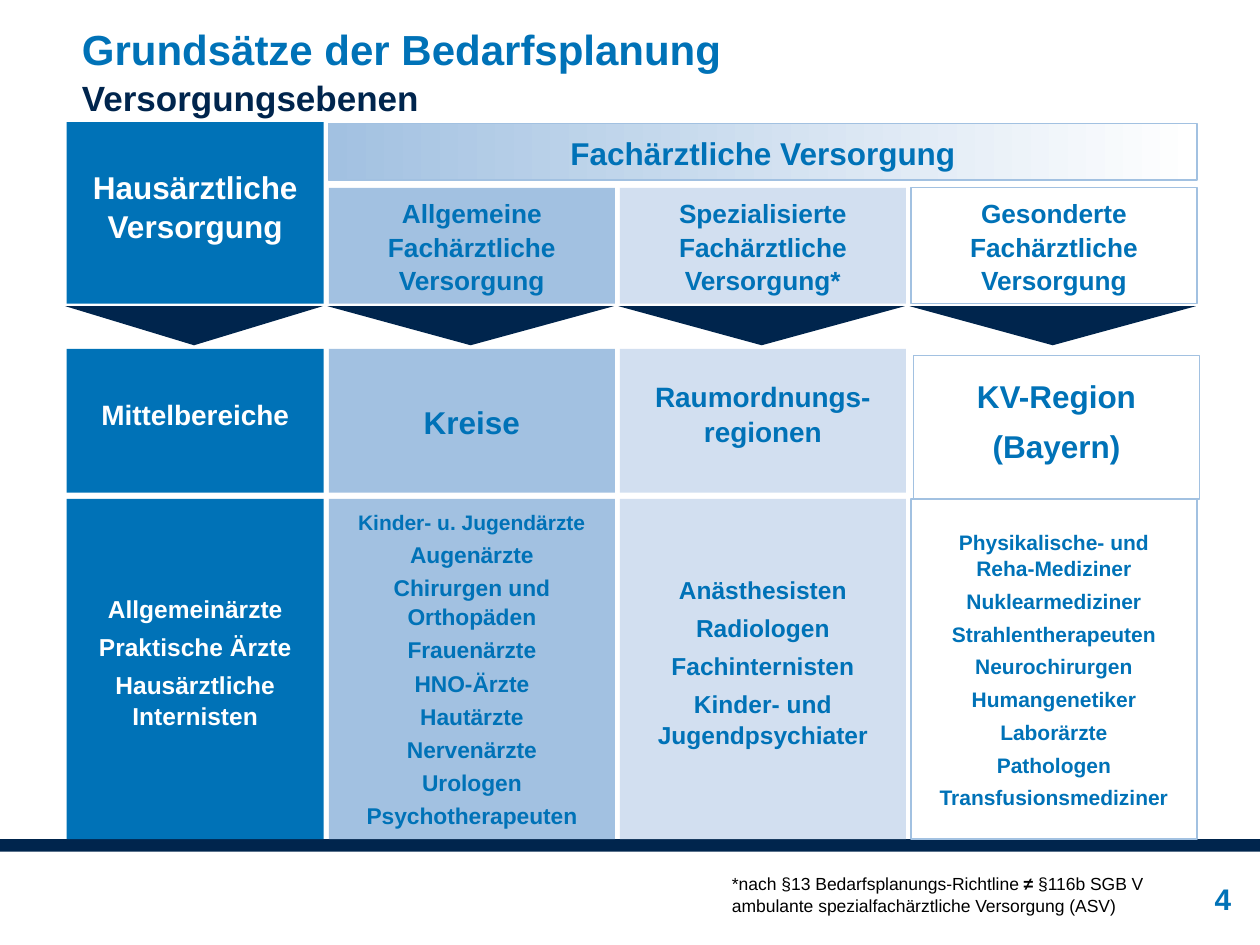
from dataclasses import dataclass

import pptx
import pptx.dml.color
import pptx.enum.shapes
import pptx.enum.text
import pptx.util

SHAPE = pptx.enum.shapes.MSO_SHAPE
ALIGN = pptx.enum.text.PP_ALIGN
ANCHOR = pptx.enum.text.MSO_ANCHOR
GRID_COLUMNS, GRID_ROWS = 100, 75
SLIDE_WIDTH, SLIDE_HEIGHT = pptx.util.Inches(10), pptx.util.Inches(7.5)


@dataclass(frozen=True)
class Theme:
    font: str = "Arial"
    blue: str = "0072B7"
    navy: str = "00254D"
    mid: str = "A2C1E1"
    pale: str = "D2DFF0"
    white: str = "FFFFFF"
    black: str = "000000"
    title: int = 24
    subtitle: int = 20
    number: int = 17
    heading: int = 18
    group: int = 15
    area: int = 16
    doctors: int = 14
    list_large: int = 13
    list_small: int = 12
    note: int = 10
    leading: float = 1.05


@dataclass(frozen=True)
class Box:
    x: float
    y: float
    w: float
    h: float

    def inner(self, x, y, w, h):
        return Box(self.x + x, self.y + y, w, h)

    def place(self):
        col, row = SLIDE_WIDTH / GRID_COLUMNS, SLIDE_HEIGHT / GRID_ROWS
        return [round(v) for v in (self.x * col, self.y * row, self.w * col, self.h * row)]


@dataclass(frozen=True)
class Level:
    group: str
    area: list
    area_size: int
    doctors: list
    sizes: list
    spacing: float
    fill: str
    ink: str
    outlined: bool = False
    top_inset: float = 0.2
    area_inset: float = 0.08
    nudge: tuple = (0, 0)


T = Theme()

LEVELS = [
    Level("Hausärztliche Versorgung", ["Mittelbereiche"], T.area,
          ["Allgemeinärzte", "Praktische Ärzte", "Hausärztliche Internisten"],
          [T.doctors] * 3, 0.3, T.blue, T.white, top_inset=0.08),
    Level("Allgemeine Fachärztliche Versorgung", ["Kreise"], T.heading,
          ["Kinder- u. Jugendärzte", "Augenärzte", "Chirurgen und Orthopäden",
           "Frauenärzte", "HNO-Ärzte", "Hautärzte", "Nervenärzte", "Urologen",
           "Psychotherapeuten"],
          [T.list_small] + [T.list_large] * 8, 0.2, T.mid, T.blue, area_inset=0.2),
    Level("Spezialisierte Fachärztliche Versorgung*", ["Raumordnungs-regionen"], T.area,
          ["Anästhesisten", "Radiologen", "Fachinternisten", "Kinder- und Jugendpsychiater"],
          [T.doctors] * 4, 0.3, T.pale, T.blue, top_inset=0.08),
    Level("Gesonderte Fachärztliche Versorgung", ["KV-Region", "(Bayern)"], T.heading,
          ["Physikalische- und Reha-Mediziner", "Nuklearmediziner", "Strahlentherapeuten",
           "Neurochirurgen", "Humangenetiker", "Laborärzte", "Pathologen",
           "Transfusionsmediziner"],
          [T.list_small] * 8, 0.3, T.white, T.blue, outlined=True, nudge=(0.2, 0.5)),
]


def rgb(value):
    return pptx.dml.color.RGBColor.from_string(value)


def style_run(r, size, color, bold=True):
    r.font.name, r.font.size, r.font.bold = T.font, pptx.util.Pt(size), bold
    r.font.color.rgb = rgb(color)


def write(tf, lines, sizes, colors, align, insets, spacing=0.0, anchor=ANCHOR.MIDDLE):
    tf.word_wrap = True
    tf.vertical_anchor = anchor
    tf.margin_left, tf.margin_top, tf.margin_right, tf.margin_bottom = map(
        pptx.util.Inches, insets)
    tf.text = "\n".join(lines)
    for i, (p, size, color) in enumerate(zip(tf.paragraphs, sizes, colors)):
        p.alignment, p.line_spacing = align, T.leading
        p.space_before = pptx.util.Pt(size * spacing if i else 0)
        for r in p.runs:
            style_run(r, size, color)


def add_block(s, box, fill, kind=SHAPE.RECTANGLE, outlined=False):
    sp = s.shapes.add_shape(kind, *box.place())
    sp.shadow.inherit = False
    sp.fill.solid()
    sp.fill.fore_color.rgb = rgb(fill)
    if outlined:
        sp.line.color.rgb = rgb(T.mid)
        sp.line.width = pptx.util.Pt(0.75)
    else:
        sp.line.fill.background()
    return sp


def add_cell(s, box, level, lines, sizes, top_inset=0.2, spacing=0.0):
    sp = add_block(s, box, level.fill, outlined=level.outlined)
    write(sp.text_frame, lines, sizes, [level.ink] * len(lines), ALIGN.CENTER,
          (0.2, top_inset, 0.2, 0.2), spacing)


def add_title(s, box):
    tf = s.shapes.add_textbox(*box.place()).text_frame
    write(tf, ["Grundsätze der Bedarfsplanung", "Versorgungsebenen"],
          [T.title, T.subtitle], [T.blue, T.navy], ALIGN.LEFT, (0, 0, 0, 0),
          anchor=ANCHOR.TOP)


def add_specialist_band(s, box):
    sp = add_block(s, box, T.mid, outlined=True)
    sp.fill.gradient()
    sp.fill.gradient_angle = 0
    for stop, color, position in zip(sp.fill.gradient_stops, (T.mid, T.white), (0, 1)):
        stop.color.rgb = rgb(color)
        stop.position = position
    write(sp.text_frame, ["Fachärztliche Versorgung"], [T.heading], [T.blue],
          ALIGN.CENTER, (0.2, 0.2, 0.2, 0.2))


def add_level(s, box, level, head_top, head_size):
    dx, dy = level.nudge
    add_cell(s, box.inner(0, head_top, box.w, 14.4 - head_top), level, [level.group],
             [head_size], level.top_inset if head_top == 0 else 0.2)
    arrow = add_block(s, box.inner(-0.1, 14.6, box.w, 3.1), T.navy, SHAPE.ISOSCELES_TRIANGLE)
    arrow.rotation = 180
    add_cell(s, box.inner(dx, 18 + dy, box.w, 11.4), level, level.area,
             [level.area_size] * len(level.area), level.area_inset, 1 / 3)
    add_cell(s, box.inner(0, 29.9, box.w, box.h - 29.9), level, level.doctors,
             level.sizes, level.top_inset, level.spacing)


def add_matrix(s, box):
    first, gap = 20.4, 0.4
    width = (box.w - first - 3 * gap) / 3
    add_specialist_band(s, box.inner(first + gap, 0.1, box.w - first - gap, 4.5))
    add_level(s, box.inner(0, 0, first, box.h), LEVELS[0], 0, T.heading)
    for i, level in enumerate(LEVELS[1:]):
        column = box.inner(first + gap + i * (width + gap), 0, width, box.h)
        add_level(s, column, level, 5.2, T.group)


def add_footer(s, box):
    add_block(s, box.inner(0, 0, box.w, 1), T.navy)
    number = s.shapes.add_textbox(*box.inner(92.5, 0.9, 5.2, 7.5).place())
    write(number.text_frame, ["4"], [T.number], [T.blue], ALIGN.RIGHT, (0.03, 0, 0, 0))
    note = s.shapes.add_textbox(*box.inner(57.8, 2.6, 37.4, 4).place())
    write(note.text_frame, ["*nach §13 Bedarfsplanungs-Richtline "], [T.note], [T.black],
          ALIGN.LEFT, (0.03, 0, 0, 0), anchor=ANCHOR.TOP)
    p = note.text_frame.paragraphs[0]
    style_run(p.runs[0], T.note, T.black, False)
    for text, bold in (("≠", True),
                       (" §116b SGB V ambulante spezialfachärztliche Versorgung (ASV)", False)):
        r = p.add_run()
        r.text = text
        style_run(r, T.note, T.black, bold)


def main():
    prs = pptx.Presentation()
    prs.slide_width, prs.slide_height = SLIDE_WIDTH, SLIDE_HEIGHT
    s = prs.slides.add_slide(prs.slide_layouts[6])
    add_footer(s, Box(0, 66.6, GRID_COLUMNS, 8.4))
    add_title(s, Box(6.5, 1.7, 77.1, 7.5))
    add_matrix(s, Box(5.3, 9.7, 89.7, 56.9))
    prs.save("out.pptx")


if __name__ == "__main__":
    main()
